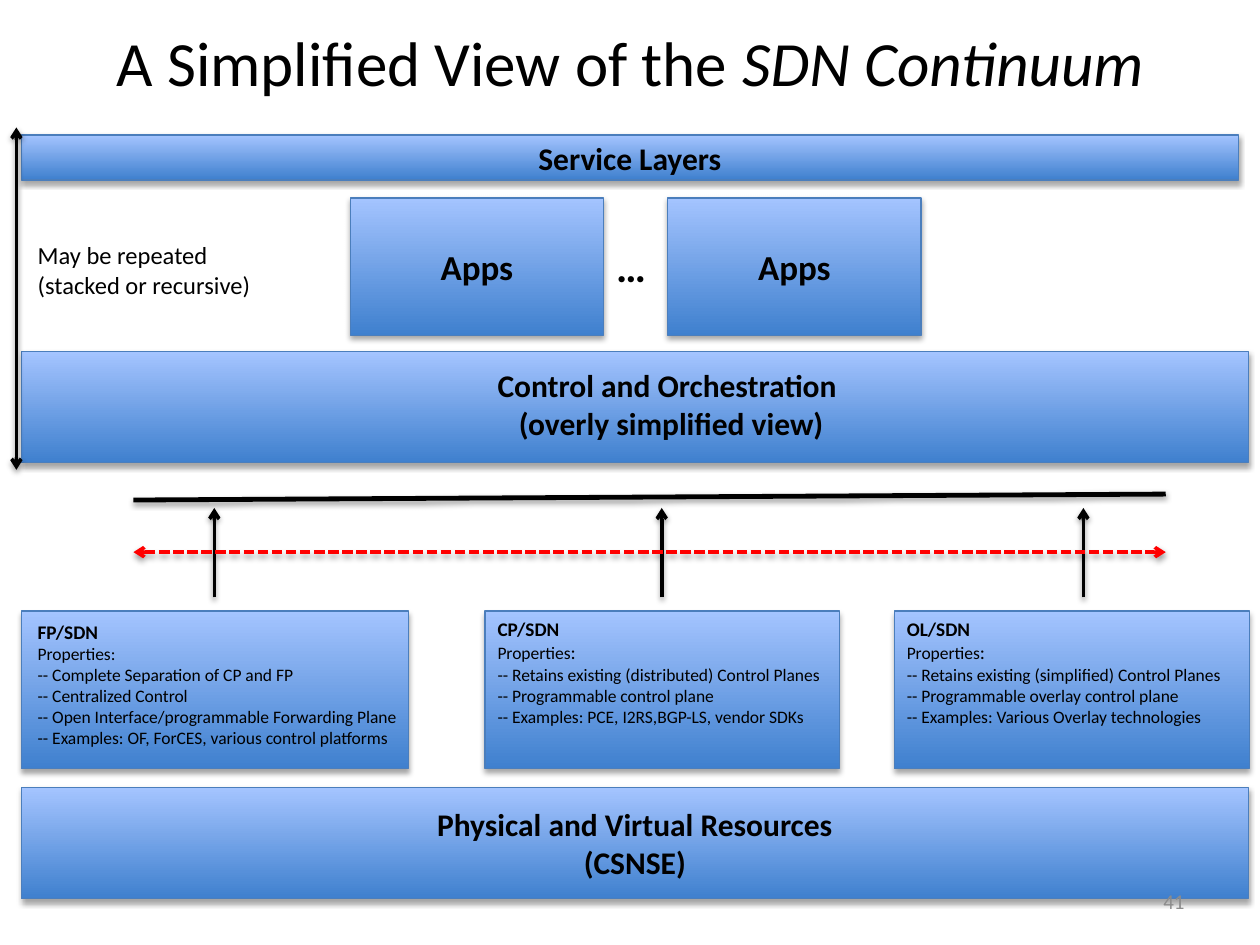
from lxml import etree
from pptx import Presentation
from pptx.dml.color import RGBColor
from pptx.enum import dml, shapes, text
from pptx.oxml import ns
from pptx.util import Cm, Pt

FONT = "Calibri"
COLORS = {"ink": "000000", "bottom": "3F80CE", "top": "A4C4FF",
          "edge": "4B7EBC", "span": "FF0000", "number": "8C8C8C"}
TITLE = [("A Simplified View of the ", False), ("SDN Continuum", True)]
LEFT, BAR_W, BAR_H = 0.43, 24.74, 2.24
BARS = [
    (15.88, BAR_W, BAR_H, ["Physical and Virtual Resources", "(CSNSE)"]),
    (7.09, BAR_W, BAR_H, []),
    (2.72, 24.54, 0.91, ["Service Layers"]),
]
APPS_X = [7.06, 13.46]
PANEL_Y, PANEL_H = 12.32, 3.18
PANELS = [
    dict(x=LEFT, w=7.8, text_at=(0.51, 12.37, 7.87, 2.87), arrow_x=4.32,
         head="FP/SDN", colon=10,
         items=["Complete Separation of CP and FP", "Centralized Control",
                "Open Interface/programmable Forwarding Plane",
                "Examples: OF, ForCES, various control platforms"]),
    dict(x=9.78, w=7.14, text_at=(9.78, PANEL_Y, 7.14, 2.49), arrow_x=13.34,
         head="CP/SDN", colon=11,
         items=["Retains existing (distributed) Control Planes",
                "Programmable control plane",
                "Examples: PCE, I2RS,BGP-LS, vendor SDKs"]),
    dict(x=18.03, w=7.16, text_at=(18.03, PANEL_Y, 6.96, 2.49), arrow_x=21.84,
         head="OL/SDN", colon=11,
         items=["Retains existing (simplified) Control Planes",
                "Programmable overlay control plane",
                "Examples: Various Overlay technologies"]),
]


def rgb(name):
    return RGBColor.from_string(COLORS[name])


def add_shadow(sp, opacity, dist):
    pr = sp._element.spPr
    for old in pr.findall(ns.qn("a:effectLst")):
        pr.remove(old)
    effects = etree.SubElement(pr, ns.qn("a:effectLst"))
    outer = etree.SubElement(effects, ns.qn("a:outerShdw"), blurRad="40000",
                             dist=str(dist), dir="5400000", rotWithShape="0")
    color = etree.SubElement(outer, ns.qn("a:srgbClr"), val=COLORS["ink"])
    etree.SubElement(color, ns.qn("a:alpha"), val=str(opacity * 1000))


def style(p, size, bold=False, color="ink", align=text.PP_ALIGN.LEFT):
    p.alignment = align
    f = p.font
    f.name, f.size, f.bold = FONT, Pt(size), bold
    f.color.rgb = rgb(color)


def write(tf, lines, size, **look):
    for i, line in enumerate(lines):
        p = tf.add_paragraph() if i else tf.paragraphs[0]
        p.add_run().text = line
        style(p, size, **look)


def add_label(s, at, lines, size, wrap=False, **look):
    tf = s.shapes.add_textbox(*map(Cm, at)).text_frame
    tf.word_wrap = wrap
    tf.auto_size = text.MSO_AUTO_SIZE.SHAPE_TO_FIT_TEXT
    write(tf, lines, size, **look)
    return tf


def add_block(s, at, lines=(), size=18):
    sp = s.shapes.add_shape(shapes.MSO_SHAPE.RECTANGLE, *map(Cm, at))
    sp.fill.gradient()
    sp.fill.gradient_angle = 90
    for stop, name in zip(sp.fill.gradient_stops, ("bottom", "top")):
        stop.color.rgb = rgb(name)
    sp.line.color.rgb = rgb("edge")
    sp.line.width = Pt(0.75)
    add_shadow(sp, 35, 23000)
    sp.text_frame.vertical_anchor = text.MSO_ANCHOR.MIDDLE
    write(sp.text_frame, lines, size, bold=True, align=text.PP_ALIGN.CENTER)


def add_line(s, ends, width=2, color="ink", arrows=(), dash=None):
    c = s.shapes.add_connector(shapes.MSO_CONNECTOR.STRAIGHT, *map(Cm, ends))
    c.line.color.rgb = rgb(color)
    c.line.width = Pt(width)
    if dash:
        c.line.dash_style = dash
    for end in arrows:
        etree.SubElement(c.line._get_or_add_ln(), ns.qn("a:" + end), type="arrow")
    add_shadow(c, 38, 20000)


def add_panel(s, panel):
    add_line(s, (panel["arrow_x"], 12.04, panel["arrow_x"], 10.24), arrows=["tailEnd"])
    add_block(s, (panel["x"], PANEL_Y, panel["w"], PANEL_H))
    lines = [panel["head"], "Properties"] + ["-- " + item for item in panel["items"]]
    tf = add_label(s, panel["text_at"], lines, 10)
    style(tf.paragraphs[0], 11, bold=True)
    r = tf.paragraphs[1].add_run()
    r.text = ":"
    r.font.size = Pt(panel["colon"])


def main():
    prs = Presentation()
    prs.slide_width, prs.slide_height = Cm(25.4), Cm(19.05)
    s = prs.slides.add_slide(prs.slide_layouts[5])

    title = s.shapes.title
    title.left, title.top, title.width, title.height = map(Cm, (1.27, 0.23, 22.86, 2.01))
    tf = title.text_frame
    tf.auto_size = text.MSO_AUTO_SIZE.NONE
    tf.vertical_anchor = text.MSO_ANCHOR.MIDDLE
    for part, italic in TITLE:
        r = tf.paragraphs[0].add_run()
        r.text, r.font.italic = part, italic
    style(tf.paragraphs[0], 36, align=text.PP_ALIGN.CENTER)

    add_line(s, (2.69, 10.08, 23.5, 9.96), width=2.75)
    for panel in PANELS:
        add_panel(s, panel)
    for y, w, h, lines in BARS:
        add_block(s, (LEFT, y, w, h), lines)
    control = add_label(s, (9.78, 7.26, 7.75, 1.8),
                        ["Control and Orchestration", "(overly simplified view)"],
                        18, bold=True)
    control.paragraphs[1]._p.get_or_add_pPr().set("marL", str(Cm(0.43)))
    for x in APPS_X:
        add_block(s, (x, 3.99, 5.11, 2.77), ["Apps"], 20)
    add_label(s, (12.17, 4.72, 1.12, 1.27), ["…"], 24, wrap=True, bold=True)

    both = ["headEnd", "tailEnd"]
    add_line(s, (2.69, 11.13, 23.5, 11.13), color="span", arrows=both,
             dash=dml.MSO_LINE.SQUARE_DOT)
    add_line(s, (0.33, 2.57, 0.33, 9.47), arrows=both)
    add_label(s, (0.51, 4.72, 4.88, 1.45),
              ["May be repeated", "(stacked or recursive)"], 14)
    number = add_label(s, (18.21, 17.65, 5.92, 1.02), ["41"], 12, wrap=True,
                       color="number", align=text.PP_ALIGN.RIGHT)
    number.auto_size = text.MSO_AUTO_SIZE.NONE
    number.vertical_anchor = text.MSO_ANCHOR.MIDDLE
    prs.save("out.pptx")


if __name__ == "__main__":
    main()
